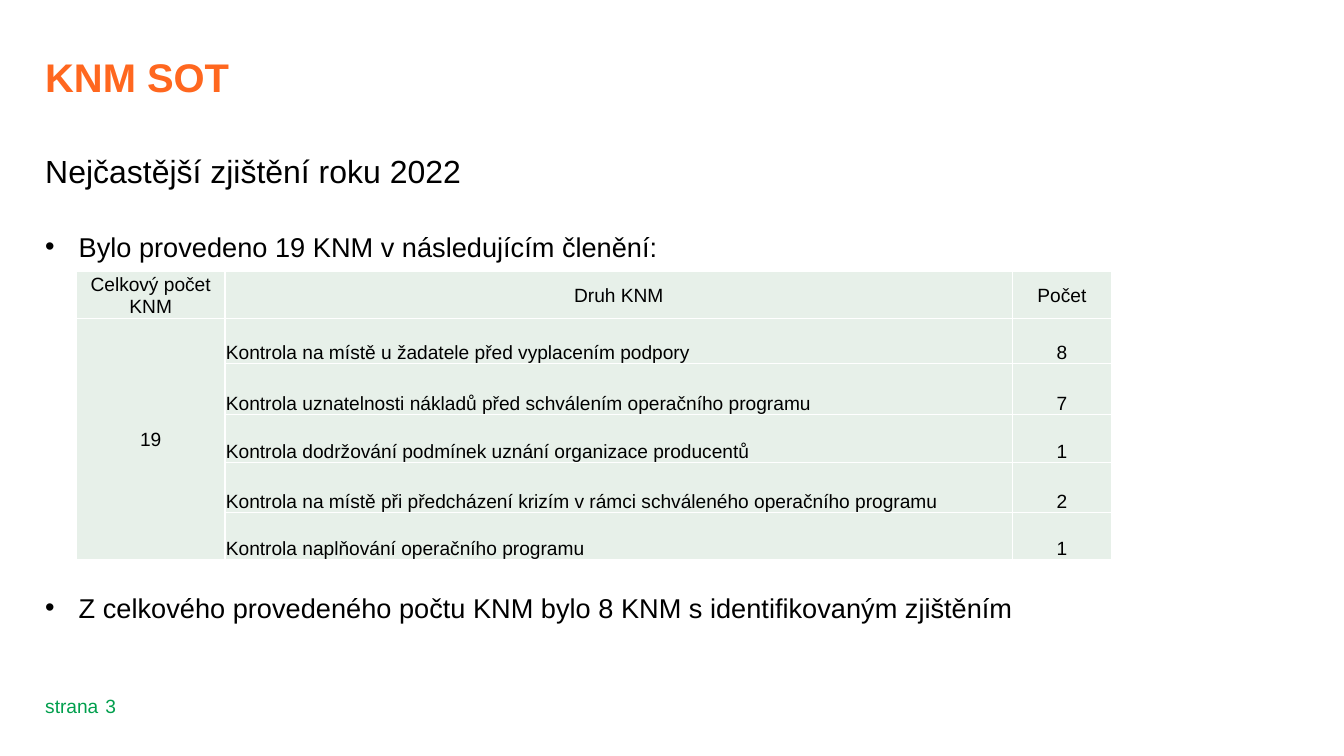
from lxml import etree
from pptx import Presentation
from pptx.dml.color import RGBColor
from pptx.enum import text as t
from pptx.oxml import ns
from pptx.util import Cm, Pt

# Content
TITLE = "KNM SOT"
HEAD = "Nejčastější zjištění roku 2022"
FIRST = "Bylo provedeno 19 KNM v následujícím členění:"
LAST = "Z celkového provedeného počtu KNM bylo 8 KNM s identifikovaným zjištěním"
PAGE = ("strana", "3")
TABLE = [
    ("Celkový počet KNM", "Druh KNM", "Počet"),
    ("19", "Kontrola na místě u žadatele před vyplacením podpory", "8"),
    ("", "Kontrola uznatelnosti nákladů před schválením operačního programu", "7"),
    ("", "Kontrola dodržování podmínek uznání organizace producentů", "1"),
    ("", "Kontrola na místě při předcházení krizím v rámci schváleného operačního programu", "2"),
    ("", "Kontrola naplňování operačního programu", "1"),
]

# Look and sizes in cm
HEX = {"title": "FF671F", "text": "000000", "page": "009F4D",
       "cell": "E7F0E9", "line": "FFFFFF"}
FONT = "Arial"
LEFT = 1.0
WIDE = 27.7
COLS = (3.28, 17.4, 2.18)
ROWS = (0.99, 0.99, 1.13, 1.06, 1.1, 1.03)
TOP, MID, END = t.MSO_ANCHOR.TOP, t.MSO_ANCHOR.MIDDLE, t.MSO_ANCHOR.BOTTOM


def write(para, text, size=12, color="text", bold=False, center=False,
          bullet=False, before=0):
    if bullet:
        props = para._p.get_or_add_pPr()
        props.set("marL", str(Cm(0.74)))
        props.set("indent", str(-Cm(0.74)))
        etree.SubElement(props, ns.qn("a:buFont")).set("typeface", FONT)
        etree.SubElement(props, ns.qn("a:buChar")).set("char", "•")
    para.alignment = t.PP_ALIGN.CENTER if center else t.PP_ALIGN.LEFT
    if before:
        para.space_before = Pt(before)
    run = para.add_run()
    run.text = text
    font = run.font
    font.name, font.size, font.bold = FONT, Pt(size), bold
    font.color.rgb = RGBColor.from_string(HEX[color])


def box(slide, x, y, w, h, anchor=TOP, wrap=True):
    frame = slide.shapes.add_textbox(Cm(x), Cm(y), Cm(w), Cm(h)).text_frame
    frame.margin_left = frame.margin_right = 0
    frame.margin_top = frame.margin_bottom = 0
    frame.word_wrap, frame.vertical_anchor = wrap, anchor
    return frame


def edge(cell):
    props = cell._tc.get_or_add_tcPr()
    for i, side in enumerate(("lnL", "lnR", "lnT", "lnB")):
        line = etree.Element(ns.qn("a:" + side), w=str(Pt(1)))
        fill = etree.SubElement(line, ns.qn("a:solidFill"))
        etree.SubElement(fill, ns.qn("a:srgbClr")).set("val", HEX["line"])
        props.insert(i, line)


def grid(slide, x, y):
    table = slide.shapes.add_table(len(ROWS), len(COLS), Cm(x), Cm(y),
                                   Cm(sum(COLS)), Cm(sum(ROWS))).table
    for col, w in zip(table.columns, COLS):
        col.width = Cm(w)
    for row, h in zip(table.rows, ROWS):
        row.height = Cm(h)
    for r, row in enumerate(TABLE):
        for c, text in enumerate(row):
            cell = table.cell(r, c)
            cell.margin_left = cell.margin_right = cell.margin_top = Cm(0.02)
            cell.margin_bottom = 0
            cell.vertical_anchor = END if r and c else MID
            cell.fill.solid()
            cell.fill.fore_color.rgb = RGBColor.from_string(HEX["cell"])
            edge(cell)
            if text:
                write(cell.text_frame.paragraphs[0], text,
                      center=r == 0 or c != 1)
    table.cell(1, 0).merge(table.cell(len(ROWS) - 1, 0))


def main():
    deck = Presentation()
    deck.slide_width, deck.slide_height = Cm(29.69), Cm(16.69)
    slide = deck.slides.add_slide(deck.slide_layouts[6])

    # Title
    frame = box(slide, LEFT, 0.58, 24.8, 2.2, MID)
    write(frame.paragraphs[0], TITLE, size=25, color="title", bold=True)

    # Heading and bullets around the table
    frame = box(slide, LEFT, 3.35, WIDE, 2.5)
    write(frame.paragraphs[0], HEAD, size=20)
    write(frame.add_paragraph(), FIRST, size=17, bullet=True, before=25)
    frame = box(slide, LEFT, 13.05, WIDE, 0.8)
    write(frame.paragraphs[0], LAST, size=17, bullet=True)

    # Table
    grid(slide, 1.69, 6.0)

    # Page number
    for text, x in zip(PAGE, (LEFT, 2.33)):
        frame = box(slide, x, 14.94, 1.2, 0.89, END, wrap=False)
        write(frame.paragraphs[0], text, color="page")

    deck.save("out.pptx")


if __name__ == "__main__":
    main()
